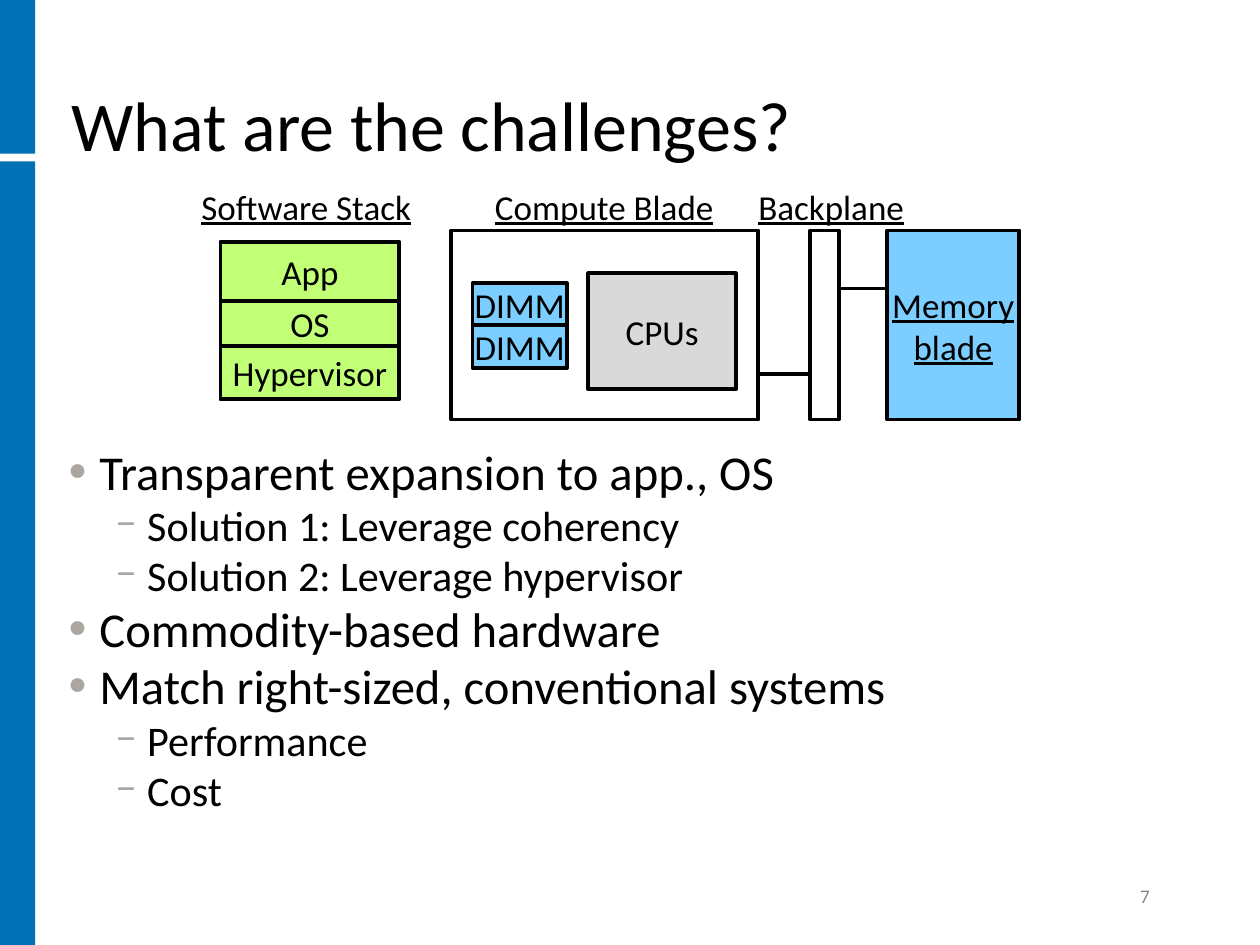
"""Build the slide on the challenges of memory blades."""
from lxml.etree import SubElement
from pptx import Presentation
from pptx.dml.color import RGBColor
from pptx.enum.shapes import MSO_CONNECTOR as CONNECTOR, MSO_SHAPE as SHAPE
from pptx.enum.text import MSO_ANCHOR as ANCHOR, PP_ALIGN as ALIGN
from pptx.oxml.ns import qn
from pptx.util import Inches, Pt

color = RGBColor.from_string
GREEN, BLUE, GRAY, WHITE, BLACK = "C0FF76", "7BCEFF", "D9D9D9", "FFFFFF", "000000"


def write(paragraph, text, size, hue=BLACK, underline=False, **layout):
    """Fill a paragraph and format its runs."""
    paragraph.text = text
    for name, value in layout.items():
        setattr(paragraph, name, value)
    font_format = {"name": "Calibri", "size": Pt(size), "underline": underline}
    for run in paragraph.runs:
        for name, value in font_format.items():
            setattr(run.font, name, value)
        run.font.color.rgb = color(hue)


def add_box(container, place, fill, text="", underline=False, outlined=True):
    """Add a rectangle with centred text."""
    shape = container.add_shape(SHAPE.RECTANGLE, *map(Inches, place))
    shape.shadow.inherit = False
    shape.fill.solid()
    shape.fill.fore_color.rgb = color(fill)
    if outlined:
        shape.line.color.rgb = color(BLACK)
        shape.line.width = Pt(2.25)
    else:
        shape.line.fill.background()
    if text:
        frame = shape.text_frame
        frame.word_wrap = False
        frame.vertical_anchor = ANCHOR.MIDDLE
        write(frame.paragraphs[0], text, 20, underline=underline, alignment=ALIGN.CENTER)


presentation = Presentation()
presentation.slide_width, presentation.slide_height = Inches(10), Inches(7.5)
slide = presentation.slides.add_slide(presentation.slide_layouts[6])
shapes = slide.shapes

for top, height in [(0, 1.22), (1.28, 6.22)]:
    add_box(shapes, (0, top, 0.28, height), "0071B4", outlined=False)

title = shapes.add_textbox(*map(Inches, (0.47, 0.12, 9.02, 1.25))).text_frame
title.word_wrap = True
title.vertical_anchor = ANCHOR.BOTTOM
write(title.paragraphs[0], "What are the challenges?", 40, line_spacing=0.9)

body = shapes.add_textbox(*map(Inches, (0.44, 1.58, 9.05, 5.42))).text_frame
body.word_wrap = True
body.margin_top = Inches(2.05)
levels = [
    {"size": 27.8, "indent": 0.25, "bullet": "•", "scale": "80000"},
    {"size": 24.1, "indent": 0.63, "bullet": "−", "scale": "100000"},
]
points = [
    (0, "Transparent expansion to app., OS"),
    (1, "Solution 1: Leverage coherency"),
    (1, "Solution 2: Leverage hypervisor"),
    (0, "Commodity-based hardware"),
    (0, "Match right-sized, conventional systems"),
    (1, "Performance"),
    (1, "Cost"),
]
for index, (depth, text) in enumerate(points):
    level = levels[depth]
    size = level["size"]
    paragraph = body.add_paragraph() if index else body.paragraphs[0]
    write(paragraph, text, size, level=depth, line_spacing=0.7,
          space_before=Pt(round(size * 0.24, 1) if index else 0),
          space_after=Pt(round(size * 0.1, 1)))
    properties = paragraph._p.get_or_add_pPr()
    properties.set("marL", str(Inches(level["indent"])))
    properties.set("indent", str(Inches(-0.25)))
    bullet_color = SubElement(properties, qn("a:buClr"))
    SubElement(bullet_color, qn("a:srgbClr"), val="ABA69F")
    SubElement(properties, qn("a:buSzPct"), val=level["scale"])
    SubElement(properties, qn("a:buFont"), typeface="Calibri")
    SubElement(properties, qn("a:buChar"), char=level["bullet"])

for start, end, height in [(6.67, 7.04, 2.29), (6, 6.44, 2.97)]:
    ends = map(Inches, (start, height, end, height))
    connector = shapes.add_connector(CONNECTOR.STRAIGHT, *ends)
    connector.line.color.rgb = color(BLACK)
    connector.line.width = Pt(2.25)
    SubElement(connector._element.spPr, qn("a:effectLst"))

labels = [("Software Stack", 1.5, 1.89), ("Compute Blade", 3.83, 1.95), ("Backplane", 5.92, 1.37)]
for text, left, width in labels:
    label = shapes.add_textbox(*map(Inches, (left, 1.42, width, 0.44))).text_frame
    label.word_wrap = False
    write(label.paragraphs[0], text, 20, underline=True)

top = 1.92
for text, height in [("App", 0.47), ("OS", 0.36), ("Hypervisor", 0.42)]:
    add_box(shapes, (1.75, top, 1.42, height), GREEN, text)
    top += height

add_box(shapes, (7.04, 1.83, 1.05, 1.5), BLUE, "Memory\vblade", underline=True)
add_box(shapes, (6.43, 1.83, 0.23, 1.5), WHITE)

compute_blade = shapes.add_group_shape().shapes
add_box(compute_blade, (3.58, 1.83, 2.44, 1.5), WHITE)
add_box(compute_blade, (4.67, 2.17, 1.17, 0.92), GRAY, "CPUs")
for top in (2.25, 2.58):
    add_box(compute_blade, (3.75, top, 0.75, 0.34), BLUE, "DIMM")

number = shapes.add_textbox(*map(Inches, (8.95, 7.01, 0.55, 0.24))).text_frame
number.word_wrap = True
number.vertical_anchor = ANCHOR.BOTTOM
write(number.paragraphs[0], "7", 11, "848589")

presentation.save("out.pptx")
